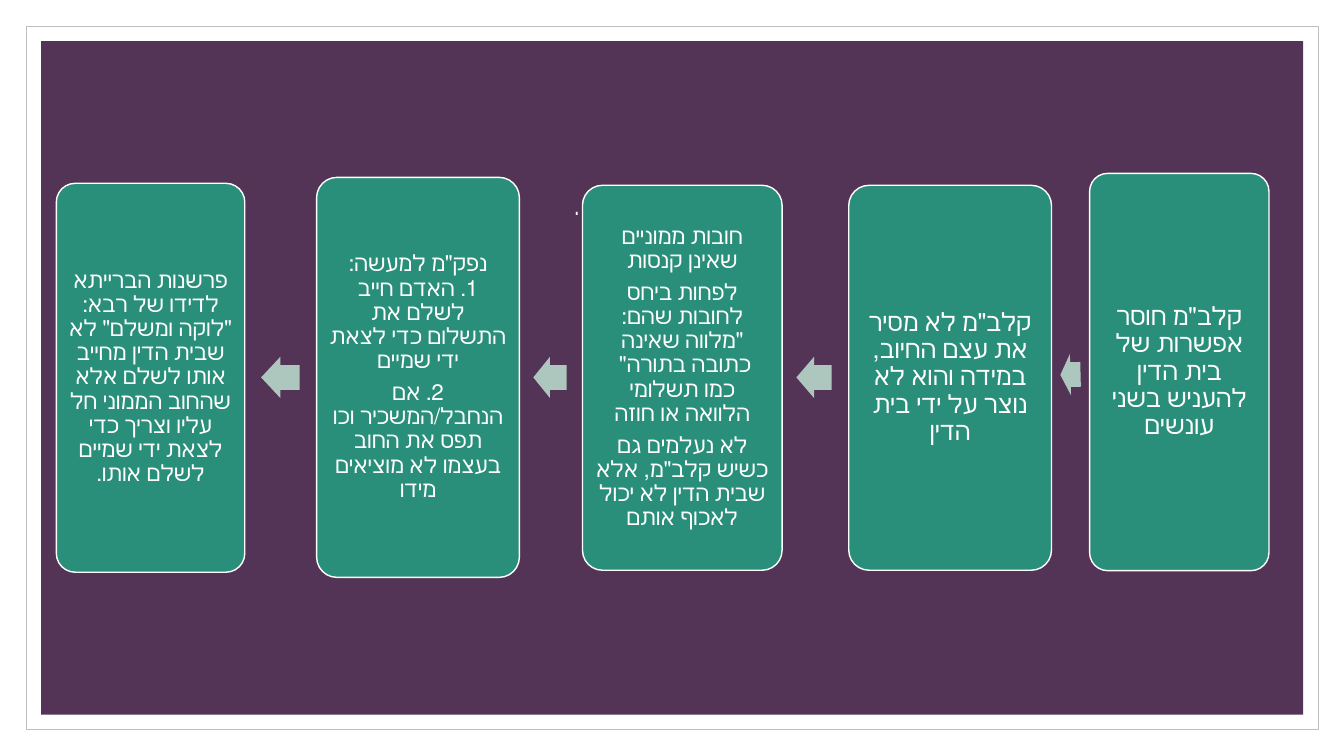
from dataclasses import dataclass

from pptx import Presentation
from pptx.dml.color import RGBColor
from pptx.enum.shapes import MSO_SHAPE as Preset
from pptx.enum.text import MSO_ANCHOR as Anchor, PP_ALIGN as Align
from pptx.util import Cm, Pt


@dataclass(frozen=True)
class Theme:
    font: str = "TeX Gyre Adventor"
    white: str = "FFFFFF"
    frame_line: str = "BFBFBF"
    panel: str = "543456"
    card: str = "298F7A"
    arrow: str = "ADC6BE"
    large: int = 18
    small: int = 16


THEME = Theme()

# Steps in reading order, right to left: place in cm, type size, paragraphs
STEPS = [
    ((27.46, 4.37, 4.52, 10.01), THEME.large,
     ['קלב"מ חוסר אפשרות של בית הדין להעניש בשני עונשים']),
    ((21.39, 4.67, 5.11, 9.7), THEME.large,
     ['קלב"מ לא מסיר את עצם החיוב, במידה והוא לא נוצר על ידי בית הדין']),
    ((14.68, 4.67, 5.03, 9.7), THEME.small,
     ['חובות ממוניים שאינן קנסות',
      'לפחות ביחס לחובות שהם: "מלווה שאינה כתובה בתורה"  כמו תשלומי הלוואה או חוזה',
      'לא נעלמים גם כשיש קלב"מ, אלא שבית הדין לא יכול לאכוף אותם']),
    ((7.98, 4.47, 5.11, 10.08), THEME.small,
     ['נפק"מ למעשה:\n1. האדם חייב לשלם את התשלום כדי לצאת ידי שמיים',
      '2. אם הנחבל/המשכיר וכו תפס את החוב בעצמו לא מוציאים מידו']),
    ((1.42, 4.62, 4.75, 9.8), THEME.small,
     ['פרשנות הברייתא לדידו של רבא: "לוקה ומשלם" לא שבית הדין מחייב אותו לשלם '
      'אלא שהחוב הממוני חל עליו וצריך כדי לצאת ידי שמיים לשלם אותו.']),
]

# Place in cm and rotation
ARROWS = [
    ((26.72, 8.92, 0.51, 1.04), 178.5),
    ((20.07, 8.99, 0.89, 1.04), 180),
    ((13.44, 8.99, 0.84, 1.04), 180),
    ((6.58, 8.99, 0.97, 1.04), 180),
]


def lengths(place):
    return [Cm(value) for value in place]


def add_preset(slide, preset, place, fill, line=None, line_width=1.0):
    shape = slide.shapes.add_shape(preset, *lengths(place))
    shape.shadow.inherit = False
    shape.fill.solid()
    shape.fill.fore_color.rgb = RGBColor.from_string(fill)
    if line:
        shape.line.color.rgb = RGBColor.from_string(line)
        shape.line.width = Pt(line_width)
    else:
        shape.line.fill.background()
    return shape


def format_runs(paragraph, size):
    for run in paragraph.runs:
        run.font.name = THEME.font
        run.font.size = Pt(size)
        run.font.color.rgb = RGBColor.from_string(THEME.white)


def add_card(slide, place, size, texts):
    card = add_preset(slide, Preset.ROUNDED_RECTANGLE, place, THEME.card, THEME.white)
    card.adjustments[0] = 0.1
    frame = card.text_frame
    frame.word_wrap = True
    frame.vertical_anchor = Anchor.MIDDLE
    frame.margin_left = frame.margin_right = Cm(0.18)
    frame.margin_top = frame.margin_bottom = Cm(0.18)
    for index, text in enumerate(texts):
        paragraph = frame.add_paragraph() if index else frame.paragraphs[0]
        paragraph.text = text
        paragraph.alignment = Align.CENTER
        paragraph.line_spacing = 0.9
        paragraph.space_after = Pt(0.35 * size)
        paragraph._p.get_or_add_pPr().set("rtl", "1")
        format_runs(paragraph, size)


def add_arrow(slide, place, rotation):
    arrow = add_preset(slide, Preset.RIGHT_ARROW, place, THEME.arrow)
    arrow.adjustments[0] = 0.6
    arrow.adjustments[1] = 0.5
    arrow.rotation = rotation


def add_label(slide, place, text):
    label = slide.shapes.add_textbox(*lengths(place))
    label.text_frame.word_wrap = True
    label.text_frame.text = text
    format_runs(label.text_frame.paragraphs[0], THEME.large)


def main():
    presentation = Presentation()
    presentation.slide_width = Cm(33.87)
    presentation.slide_height = Cm(19.05)
    blank_layout = presentation.slide_layouts[6]
    slide = presentation.slides.add_slide(blank_layout)

    add_preset(slide, Preset.RECTANGLE, (0.66, 0.66, 32.56, 17.73),
               THEME.white, THEME.frame_line, 0.5)
    add_preset(slide, Preset.RECTANGLE, (1.04, 1.04, 31.8, 16.97), THEME.panel)
    add_label(slide, (14.2, 4.67, 16.94, 1.02), ".")
    for place, size, texts in STEPS:
        add_card(slide, place, size, texts)
    for place, rotation in ARROWS:
        add_arrow(slide, place, rotation)

    presentation.save("out.pptx")


if __name__ == "__main__":
    main()
